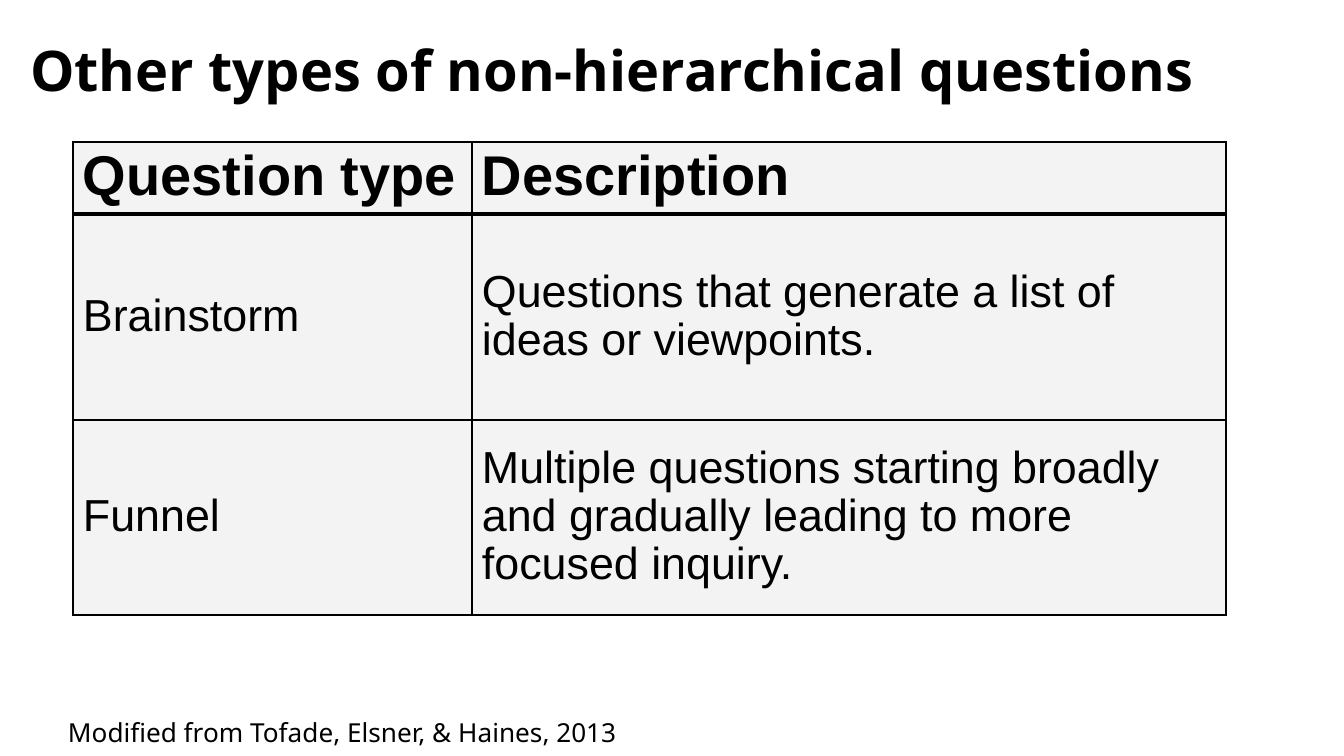
"""Builds a slide with a table of non-hierarchical question types."""
import pptx
import pptx.dml.color
import pptx.enum.text
import pptx.oxml
import pptx.oxml.ns
import pptx.util

TITLE = "Other types of non-hierarchical questions"
ROWS = [
    ("Question type", "Description"),
    ("Brainstorm", "Questions that generate a list of ideas or viewpoints."),
    ("Funnel", "Multiple questions starting broadly and gradually leading to more focused inquiry."),
]
CREDIT = "Modified from Tofade, Elsner, & Haines, 2013"
COLUMN_WIDTHS = [399, 754]
ROW_HEIGHTS = [72, 206, 195]
COLORS = {"text": "000000", "border": "000000", "cell": "F3F3F3", "background": "FFFFFF"}
EMU_PER_PX = 914400 / 134.4
MIDDLE = pptx.enum.text.MSO_ANCHOR.MIDDLE


def px(length):
    return pptx.util.Emu(round(length * EMU_PER_PX))


def color(name):
    return pptx.dml.color.RGBColor.from_string(COLORS[name])


def set_text(frame, text, size, font="Arial", bold=False, spacing=1.0):
    frame.word_wrap = True
    paragraph = frame.paragraphs[0]
    paragraph.alignment = pptx.enum.text.PP_ALIGN.LEFT
    paragraph.line_spacing = spacing
    run = paragraph.add_run()
    run.text = text
    run.font.name = font
    run.font.size = pptx.util.Pt(size)
    run.font.bold = bold
    run.font.color.rgb = color("text")


def set_margins(target, horizontal, vertical):
    target.margin_left = target.margin_right = px(horizontal)
    target.margin_top = target.margin_bottom = px(vertical)


def set_borders(cell, widths):
    properties = cell._tc.get_or_add_tcPr()
    for index, (side, width) in enumerate(widths.items()):
        properties.insert(index, pptx.oxml.parse_xml(
            f'<a:ln{side} {pptx.oxml.ns.nsdecls("a")} w="{pptx.util.Pt(width)}">'
            f'<a:solidFill><a:srgbClr val="{COLORS["border"]}"/></a:solidFill>'
            f'</a:ln{side}>'))


def add_title(slide):
    title = slide.shapes.title
    title.left, title.top, title.width, title.height = px(20), px(43), px(1230), px(60)
    title.text_frame.auto_size = pptx.enum.text.MSO_AUTO_SIZE.NONE
    title.text_frame.vertical_anchor = MIDDLE
    set_margins(title.text_frame, 10, 5)
    set_text(title.text_frame, TITLE, 30, font="Noto Sans", bold=True, spacing=0.9)


def add_question_table(slide):
    table = slide.shapes.add_table(
        len(ROWS), len(COLUMN_WIDTHS), px(73), px(142),
        px(sum(COLUMN_WIDTHS)), px(sum(ROW_HEIGHTS))).table
    table.horz_banding = False
    for column, width in zip(table.columns, COLUMN_WIDTHS):
        column.width = px(width)
    for row_index, (row, texts) in enumerate(zip(table.rows, ROWS)):
        row.height = px(ROW_HEIGHTS[row_index])
        header = row_index == 0
        for cell, text in zip(row.cells, texts):
            cell.fill.solid()
            cell.fill.fore_color.rgb = color("cell")
            cell.vertical_anchor = MIDDLE
            set_margins(cell, 10, 5)
            set_text(cell.text_frame, text, 30 if header else 24, bold=header, spacing=0.96)
            set_borders(cell, {"L": 1, "R": 1, "T": 3 if row_index == 1 else 1,
                               "B": 3 if header else 1})


def add_credit(slide):
    frame = slide.shapes.add_textbox(px(55), px(703), px(629), px(39)).text_frame
    set_margins(frame, 13, 13)
    set_text(frame, CREDIT, 14, font="Noto Sans")


def main():
    presentation = pptx.Presentation()
    presentation.slide_width, presentation.slide_height = px(1344), px(756)
    slide = presentation.slides.add_slide(presentation.slide_layouts[5])
    slide.background.fill.solid()
    slide.background.fill.fore_color.rgb = color("background")
    add_title(slide)
    add_question_table(slide)
    add_credit(slide)
    presentation.save("out.pptx")


if __name__ == "__main__":
    main()
